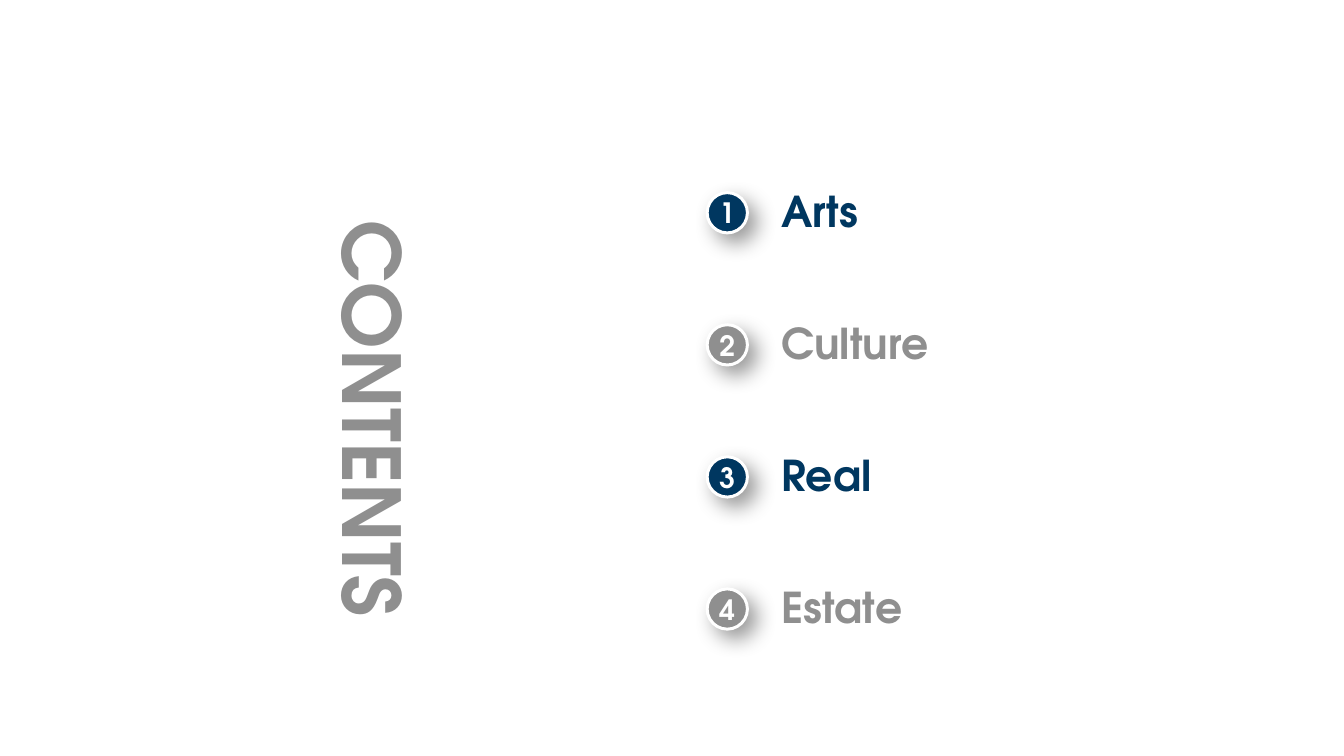
from dataclasses import dataclass

from lxml import etree
from pptx import Presentation
from pptx import util as u
from pptx.dml.color import RGBColor
from pptx.enum import shapes, text
from pptx.oxml.ns import qn

COLORS = {"navy": "003760", "gray": "8F8F8F", "white": "FFFFFF", "shadow": "000000"}
FONT = "TeX Gyre Adventor"
FIRST_ROW_TOP = 5.12
ROW_PITCH = 3.51
BADGE_LEFT, BADGE_SIZE = 18.79, 1.07
LABEL_LEFT, LABEL_WIDTH, LABEL_HEIGHT = 20.76, 6.25, 1.37
LABEL_RISE = 0.21  # label top above badge top


@dataclass(frozen=True)
class Section:
    name: str
    color: str


SECTIONS = [
    Section("Arts", "navy"),
    Section("Culture", "gray"),
    Section("Real", "navy"),
    Section("Estate", "gray"),
]


def rgb(name: str) -> RGBColor:
    return RGBColor.from_string(COLORS[name])


def write_text(shape, content: str, size: float, color: str, align, anchor) -> None:
    frame = shape.text_frame
    frame.text = content
    frame.word_wrap = True
    frame.auto_size = text.MSO_AUTO_SIZE.NONE
    frame.vertical_anchor = anchor
    frame.margin_left = frame.margin_right = frame.margin_top = frame.margin_bottom = 0
    paragraph = frame.paragraphs[0]
    paragraph.alignment = align
    paragraph.line_spacing = 1.0
    paragraph.space_before = u.Pt(0)
    font = paragraph.runs[0].font
    font.name, font.size, font.bold = FONT, u.Pt(size), True
    font.color.rgb = rgb(color)


def add_soft_shadow(shape) -> None:
    shape.shadow.inherit = False
    effects = shape._element.spPr.find(qn("a:effectLst"))
    shadow = etree.SubElement(
        effects, qn("a:outerShdw"), blurRad=str(u.Pt(16)), dist=str(u.Pt(9)),
        dir=str(45 * 60000), algn="tl", rotWithShape="0")
    color = etree.SubElement(shadow, qn("a:srgbClr"), val=COLORS["shadow"])
    etree.SubElement(color, qn("a:alpha"), val="40000")


def add_label_outline(slide, top: float):
    left, right = u.Cm(LABEL_LEFT), u.Cm(LABEL_LEFT + LABEL_WIDTH)
    upper, lower = u.Cm(top), u.Cm(top + LABEL_HEIGHT)
    builder = slide.shapes.build_freeform(left, upper)
    builder.add_line_segments([(right, upper), (right, lower), (left, lower)], close=True)
    label = builder.convert_to_shape()
    label.fill.background()
    label.line.fill.background()
    label.shadow.inherit = False
    return label


def add_section(slide, number: int, section: Section) -> None:
    top = FIRST_ROW_TOP + (number - 1) * ROW_PITCH

    # Numbered badge
    badge = slide.shapes.add_shape(
        shapes.MSO_SHAPE.OVAL, u.Cm(BADGE_LEFT), u.Cm(top), u.Cm(BADGE_SIZE), u.Cm(BADGE_SIZE))
    badge.fill.solid()
    badge.fill.fore_color.rgb = rgb(section.color)
    badge.line.color.rgb = rgb("white")
    badge.line.width = u.Pt(2.25)
    add_soft_shadow(badge)
    write_text(badge, str(number), 21.1, "white",
               text.PP_ALIGN.CENTER, text.MSO_ANCHOR.MIDDLE)

    # Section name
    label = add_label_outline(slide, top - LABEL_RISE)
    write_text(label, section.name, 32, section.color,
               text.PP_ALIGN.LEFT, text.MSO_ANCHOR.MIDDLE)


def add_title(slide) -> None:
    title = slide.shapes.title
    title.left, title.top = u.Cm(3.25), u.Cm(9.85)
    title.width, title.height = u.Cm(13.39), u.Cm(2.57)
    title.rotation = 90
    write_text(title, "CONTENTS", 60, "gray", text.PP_ALIGN.CENTER, text.MSO_ANCHOR.TOP)


def main() -> None:
    presentation = Presentation()
    presentation.slide_width = u.Cm(35.71)
    presentation.slide_height = u.Cm(20.09)
    slide = presentation.slides.add_slide(presentation.slide_layouts[5])
    slide.background.fill.solid()
    slide.background.fill.fore_color.rgb = rgb("white")

    add_title(slide)
    for number, section in enumerate(SECTIONS, start=1):
        add_section(slide, number, section)

    presentation.save("out.pptx")


if __name__ == "__main__":
    main()
